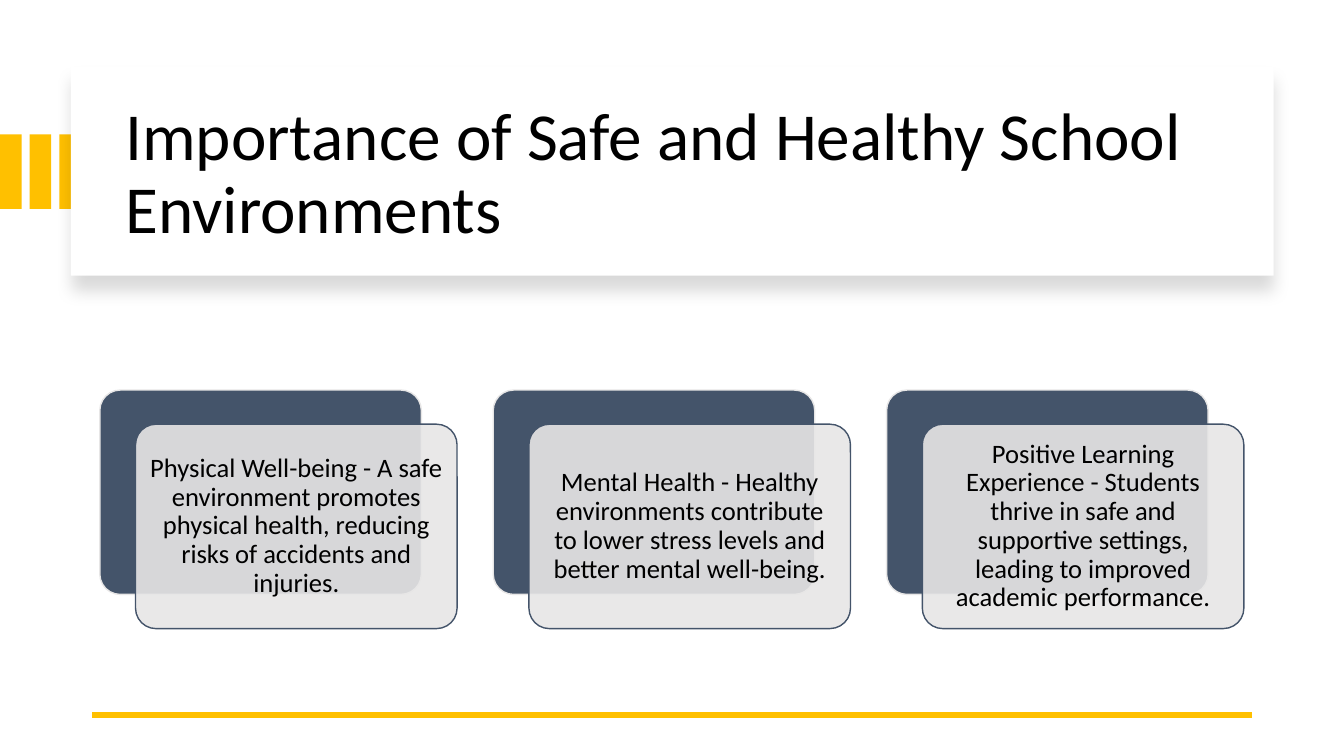
from dataclasses import dataclass

from lxml import etree
from pptx import Presentation
from pptx.dml.color import RGBColor
from pptx.enum.shapes import MSO_CONNECTOR, MSO_SHAPE
from pptx.enum.text import MSO_ANCHOR, MSO_AUTO_SIZE, PP_ALIGN
from pptx.oxml.ns import qn
from pptx.shapes.autoshape import Shape
from pptx.slide import Slide
from pptx.text.text import TextFrame
from pptx.util import Pt

RECT = MSO_SHAPE.RECTANGLE
ROUND = MSO_SHAPE.ROUNDED_RECTANGLE
STRAIGHT = MSO_CONNECTOR.STRAIGHT
MIDDLE = MSO_ANCHOR.MIDDLE
FIXED = MSO_AUTO_SIZE.NONE
LEFT = PP_ALIGN.LEFT
CENTER = PP_ALIGN.CENTER

FONT = "Calibri"
COLORS = {
    "gold": "FFC000",
    "navy": "44546A",
    "gray": "E7E6E6",
    "white": "FFFFFF",
    "black": "000000",
}
TITLE = "Importance of Safe and Healthy School Environments"
TEXTS = [
    "Physical Well-being - A safe environment promotes physical health, "
    "reducing risks of accidents and injuries.",
    "Mental Health - Healthy environments contribute to lower stress levels "
    "and better mental well-being.",
    "Positive Learning Experience - Students thrive in safe and supportive "
    "settings, leading to improved academic performance.",
]


@dataclass
class Box:
    left: float
    top: float
    width: float
    height: float
    fill: str
    line: str = ""
    kind: MSO_SHAPE = RECT


def paint(name: str) -> RGBColor:
    return RGBColor.from_string(COLORS[name])


def add_box(slide: Slide, box: Box) -> Shape:
    shape = slide.shapes.add_shape(
        box.kind, Pt(box.left), Pt(box.top), Pt(box.width), Pt(box.height)
    )
    shape.shadow.inherit = False
    shape.fill.solid()
    shape.fill.fore_color.rgb = paint(box.fill)
    if box.line:
        shape.line.color.rgb = paint(box.line)
        shape.line.width = Pt(1)
    else:
        shape.line.fill.background()
    if box.kind == ROUND:
        shape.adjustments[0] = 0.1
    return shape


def write(frame: TextFrame, text: str, size: float, align: PP_ALIGN) -> None:
    frame.text = text
    frame.word_wrap = True
    frame.auto_size = FIXED
    frame.vertical_anchor = MIDDLE
    para = frame.paragraphs[0]
    para.alignment = align
    para.line_spacing = 0.9
    font = para.runs[0].font
    font.name = FONT
    font.size = Pt(size)
    font.color.rgb = paint("black")


def add_alpha(color: etree.ElementBase, percent: int) -> None:
    etree.SubElement(color, qn("a:alpha"), val=str(percent * 1000))


def add_shade(shape: Shape) -> None:
    effects = shape.element.spPr.find(qn("a:effectLst"))
    shade = etree.SubElement(
        effects, qn("a:outerShdw"), blurRad=str(Pt(11)), dist=str(Pt(10)),
        dir="5400000", algn="t", rotWithShape="0",
    )
    color = etree.SubElement(shade, qn("a:srgbClr"), val=COLORS["black"])
    add_alpha(color, 15)


def add_title(slide: Slide) -> None:
    add_shade(add_box(slide, Box(50.7, 48, 859, 149, "white")))
    title = slide.shapes.title
    title.left, title.top = Pt(82.4), Pt(64)
    title.width, title.height = Pt(801), Pt(122.4)
    write(title.text_frame, TITLE, 48, LEFT)
    title.element.getparent().append(title.element)


def add_rule(slide: Slide) -> None:
    rule = slide.shapes.add_connector(
        STRAIGHT, Pt(894.4), Pt(510.5), Pt(66), Pt(510.5)
    )
    rule.line.color.rgb = paint("gold")
    rule.line.width = Pt(4.5)
    etree.SubElement(rule.element.spPr, qn("a:effectLst"))


def add_card(slide: Slide, left: float, text: str) -> None:
    top, width, height = 278.6, 229.7, 146
    add_box(slide, Box(left, top, width, height, "navy", "gray", ROUND))
    front = add_box(
        slide,
        Box(left + 25.5, top + 24.4, width, height, "gray", "navy", ROUND),
    )
    add_alpha(front.fill.fore_color._xFill.find(qn("a:srgbClr"))
              if hasattr(front.fill.fore_color, "_xFill")
              else front.element.spPr.find(qn("a:solidFill"))[0], 90)
    frame = front.text_frame
    frame.margin_left = frame.margin_right = Pt(6)
    frame.margin_top = frame.margin_bottom = Pt(6)
    write(frame, text, 19, CENTER)


def main() -> None:
    deck = Presentation()
    deck.slide_width, deck.slide_height = Pt(960), Pt(540)
    slide = deck.slides.add_slide(deck.slide_layouts[5])
    for i in range(3):
        add_box(slide, Box(21.2 * i, 96, 15.4, 53.3, "gold"))
    add_title(slide)
    add_rule(slide)
    for i, text in enumerate(TEXTS):
        add_card(slide, 71.3 + 281 * i, text)
    deck.save("out.pptx")


if __name__ == "__main__":
    main()
